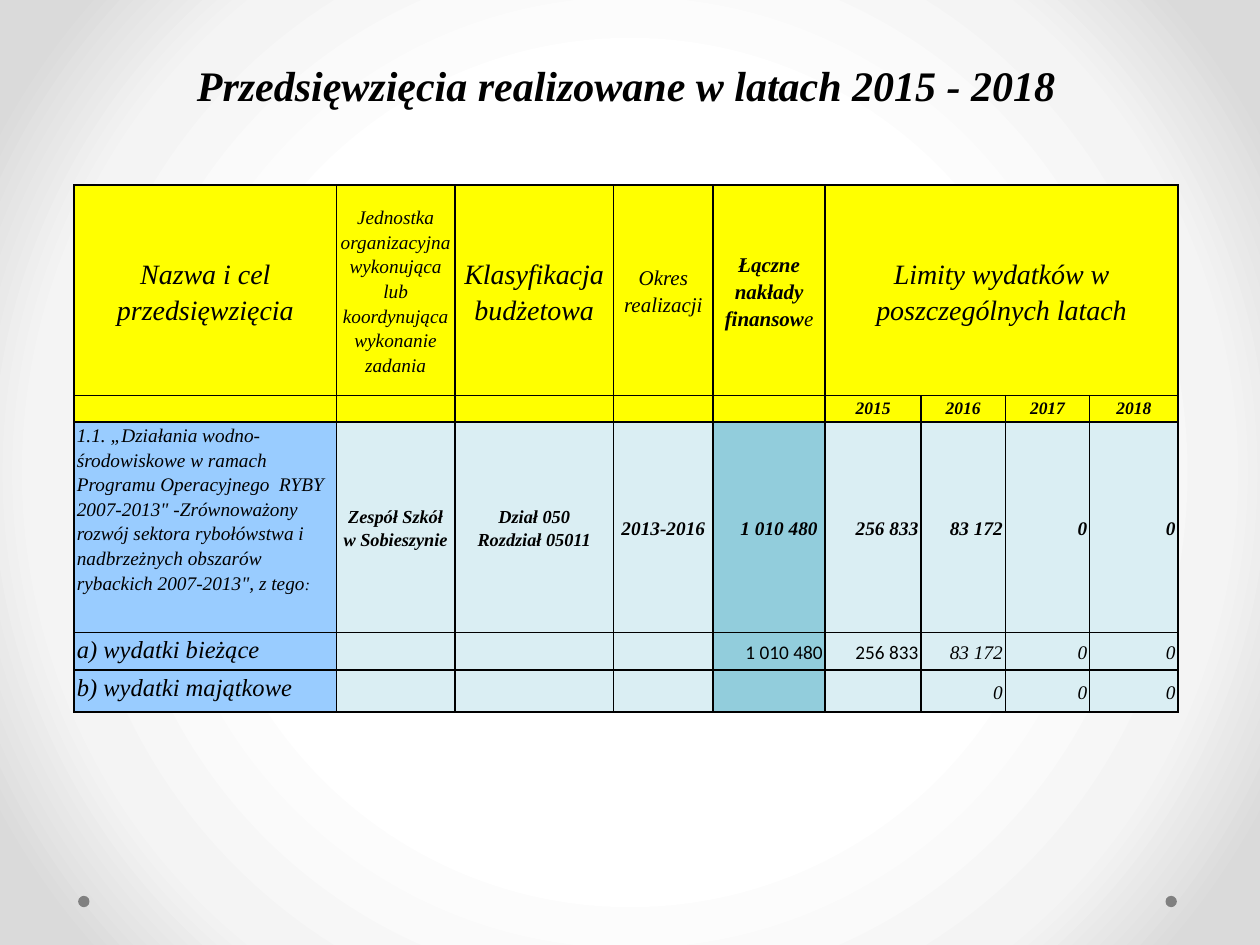
import dataclasses

import lxml.etree
import pptx
import pptx.dml.color
import pptx.enum.shapes
import pptx.enum.text
import pptx.oxml
import pptx.oxml.ns
import pptx.util

Inches = pptx.util.Inches
Pt = pptx.util.Pt
Align = pptx.enum.text.PP_ALIGN
Anchor = pptx.enum.text.MSO_ANCHOR
DRAWING = 'xmlns:a="http://schemas.openxmlformats.org/drawingml/2006/main"'


@dataclasses.dataclass(frozen=True)
class Theme:
    font: str = "Times New Roman"
    figure_font: str = "Calibri"
    ink: str = "000000"
    header: str = "FFFF00"
    name: str = "99CCFF"
    total: str = "92CDDC"
    body: str = "DAEEF3"
    dot: str = "808080"
    background: tuple = ((50, "FFFFFF"), (76, "F4F4F4"), (92, "DADADA"))
    title_size: float = 24
    heading_size: float = 16
    item_size: float = 14
    label_size: float = 12
    text_size: float = 11
    unit_size: float = 10.5
    year_size: float = 10
    colon_size: float = 9
    line_spacing: float = 1.15
    border: float = 1
    outer_border: float = 1.5


@dataclasses.dataclass
class Entry:
    """Text of one table cell; the tail is a last run with its own size or weight."""
    text: str = ""
    size: float = 10
    bold: bool = False
    italic: bool = True
    font: str = "Times New Roman"
    align: int = Align.CENTER
    anchor: int = Anchor.MIDDLE
    right_margin: float = 0.02
    tail: str = ""
    tail_size: float = None
    tail_bold: bool = None


class SlideBuilder:
    def __init__(self, presentation, theme):
        self.theme = theme
        self.slide = presentation.slides.add_slide(presentation.slide_layouts[5])

    def color(self, value):
        return pptx.dml.color.RGBColor.from_string(value)

    def background(self):
        """Radial gradient, which the linear default has to be turned into."""
        fill = self.slide.background.fill
        fill.gradient()
        properties = self.slide.background._cSld.bg.bgPr
        stops = "".join(
            f'<a:gs pos="{position * 1000}"><a:srgbClr val="{value}"/></a:gs>'
            for position, value in self.theme.background)
        gradient = pptx.oxml.parse_xml(
            f'<a:gradFill {DRAWING} rotWithShape="1"><a:gsLst>{stops}</a:gsLst>'
            '<a:path path="circle"><a:fillToRect l="50000" t="50000" r="50000" b="50000"/>'
            '</a:path></a:gradFill>')
        properties.replace(properties.find(pptx.oxml.ns.qn("a:gradFill")), gradient)

    def format_paragraph(self, paragraph, size, bold, italic, font, align):
        paragraph.alignment = align
        paragraph.line_spacing = self.theme.line_spacing
        paragraph.font.size = Pt(size)
        paragraph.font.bold = bold
        paragraph.font.italic = italic
        paragraph.font.name = font
        paragraph.font.color.rgb = self.color(self.theme.ink)

    def title(self, text, left, top, width, height):
        shape = self.slide.shapes.title
        shape.left, shape.top = Inches(left), Inches(top)
        shape.width, shape.height = Inches(width), Inches(height)
        frame = shape.text_frame
        frame.text = text
        frame.vertical_anchor = Anchor.TOP
        frame.auto_size = pptx.enum.text.MSO_AUTO_SIZE.NONE
        paragraph = frame.paragraphs[0]
        self.format_paragraph(paragraph, self.theme.title_size, True, True,
                              self.theme.font, Align.CENTER)
        paragraph.space_after = Pt(10)

    def dot(self, left, top, diameter):
        shape = self.slide.shapes.add_shape(
            pptx.enum.shapes.MSO_SHAPE.OVAL,
            Inches(left), Inches(top), Inches(diameter), Inches(diameter))
        shape.shadow.inherit = False
        shape.fill.solid()
        shape.fill.fore_color.rgb = self.color(self.theme.dot)
        shape.line.fill.background()

    def borders(self, cell, row, column):
        properties = cell._tc.get_or_add_tcPr()
        for side in "LRTB":
            outer = (side == "L" and column == 0) or (side == "T" and row == 0)
            width = Pt(self.theme.outer_border if outer else self.theme.border)
            line = lxml.etree.SubElement(
                properties, pptx.oxml.ns.qn(f"a:ln{side}"), w=str(int(width)))
            fill = lxml.etree.SubElement(line, pptx.oxml.ns.qn("a:solidFill"))
            lxml.etree.SubElement(fill, pptx.oxml.ns.qn("a:srgbClr"), val=self.theme.ink)

    def fill_cell(self, cell, entry, color):
        cell.fill.solid()
        cell.fill.fore_color.rgb = self.color(color)
        cell.margin_left, cell.margin_right = Inches(0.02), Inches(entry.right_margin)
        cell.margin_top = cell.margin_bottom = 0
        cell.vertical_anchor = entry.anchor
        cell.text = entry.text
        for paragraph in cell.text_frame.paragraphs:
            self.format_paragraph(paragraph, entry.size, entry.bold, entry.italic,
                                  entry.font, entry.align)
        if entry.tail:
            run = cell.text_frame.paragraphs[-1].add_run()
            run.text = entry.tail
            run.font.bold = entry.tail_bold
            if entry.tail_size:
                run.font.size = Pt(entry.tail_size)

    def table(self, left, top, widths, heights, rows, row_colors):
        table = self.slide.shapes.add_table(
            len(heights), len(widths), Inches(left), Inches(top),
            Inches(sum(widths)), Inches(sum(heights))).table
        table.first_row = table.horz_banding = False
        for column, width in zip(table.columns, widths):
            column.width = Inches(width)
        for row, height in zip(table.rows, heights):
            row.height = Inches(height)
        for row, (entries, colors) in enumerate(zip(rows, row_colors)):
            for column, (entry, color) in enumerate(zip(entries, colors)):
                cell = table.cell(row, column)
                self.borders(cell, row, column)
                self.fill_cell(cell, entry, color)
        return table


def table_rows(theme):
    def heading(text, size=theme.heading_size, **options):
        return Entry(text, size, **options)

    def fact(text, size=theme.unit_size):
        return Entry(text, size, bold=True)

    def amount(text, **options):
        return Entry(text, theme.text_size, align=Align.RIGHT, **options)

    def item(text, size=theme.item_size, **options):
        return Entry(text, size, align=Align.LEFT, anchor=Anchor.TOP, **options)

    blank = Entry()
    figure = {"font": theme.figure_font, "italic": False}
    years = [Entry(str(year), theme.year_size, bold=True, anchor=Anchor.TOP)
             for year in range(2015, 2019)]
    return [
        [heading("Nazwa i cel przedsięwzięcia"),
         heading("Jednostka organizacyjna wykonująca lub koordynująca wykonanie zadania",
                 theme.text_size),
         heading("Klasyfikacja budżetowa"),
         heading("Okres realizacji", theme.label_size),
         heading("Łączne nakłady finansow", theme.label_size, bold=True,
                 tail="e", tail_bold=False),
         heading("Limity wydatków w poszczególnych latach")] + [blank] * 3,
        [blank] * 5 + years,
        [item('1.1. „Działania wodno-środowiskowe w ramach Programu Operacyjnego  RYBY '
              '2007-2013" -Zrównoważony rozwój sektora rybołówstwa i nadbrzeżnych '
              'obszarów rybackich 2007-2013", z tego', theme.text_size,
              tail=":", tail_size=theme.colon_size),
         fact("Zespół Szkół\nw Sobieszynie"),
         fact("Dział 050\nRozdział 05011"),
         fact("2013-2016", theme.text_size),
         amount("1 010 480", bold=True, right_margin=0.06)]
        + [amount(text, bold=True) for text in ("256 833", "83 172", "0", "0")],
        [item("a) wydatki bieżące")] + [blank] * 3
        + [amount("1 010 480", **figure), amount("256 833", **figure),
           amount("83 172"), amount("0"), amount("0")],
        [item("b) wydatki majątkowe")] + [blank] * 5 + [amount("0")] * 3,
    ]


def main():
    theme = Theme()
    presentation = pptx.Presentation()
    presentation.slide_width, presentation.slide_height = Inches(10), Inches(7.5)
    builder = SlideBuilder(presentation, theme)
    builder.background()
    for left in (0.62, 9.25):
        builder.dot(left, 7.11, 0.09)
    header_colors = [theme.header] * 9
    body_colors = [theme.name] + [theme.body] * 3 + [theme.total] + [theme.body] * 4
    table = builder.table(
        0.59, 1.47,
        widths=(2.08, 0.94, 1.26, 0.79, 0.89, 0.76, 0.67, 0.67, 0.7),
        heights=(1.67, 0.21, 1.67, 0.3, 0.33),
        rows=table_rows(theme),
        row_colors=[header_colors] * 2 + [body_colors] * 3)
    table.cell(0, 5).merge(table.cell(0, 8))
    builder.title("Przedsięwzięcia realizowane w latach 2015 - 2018", 0.59, 0.36, 8.76, 0.53)
    presentation.save("out.pptx")


if __name__ == "__main__":
    main()
